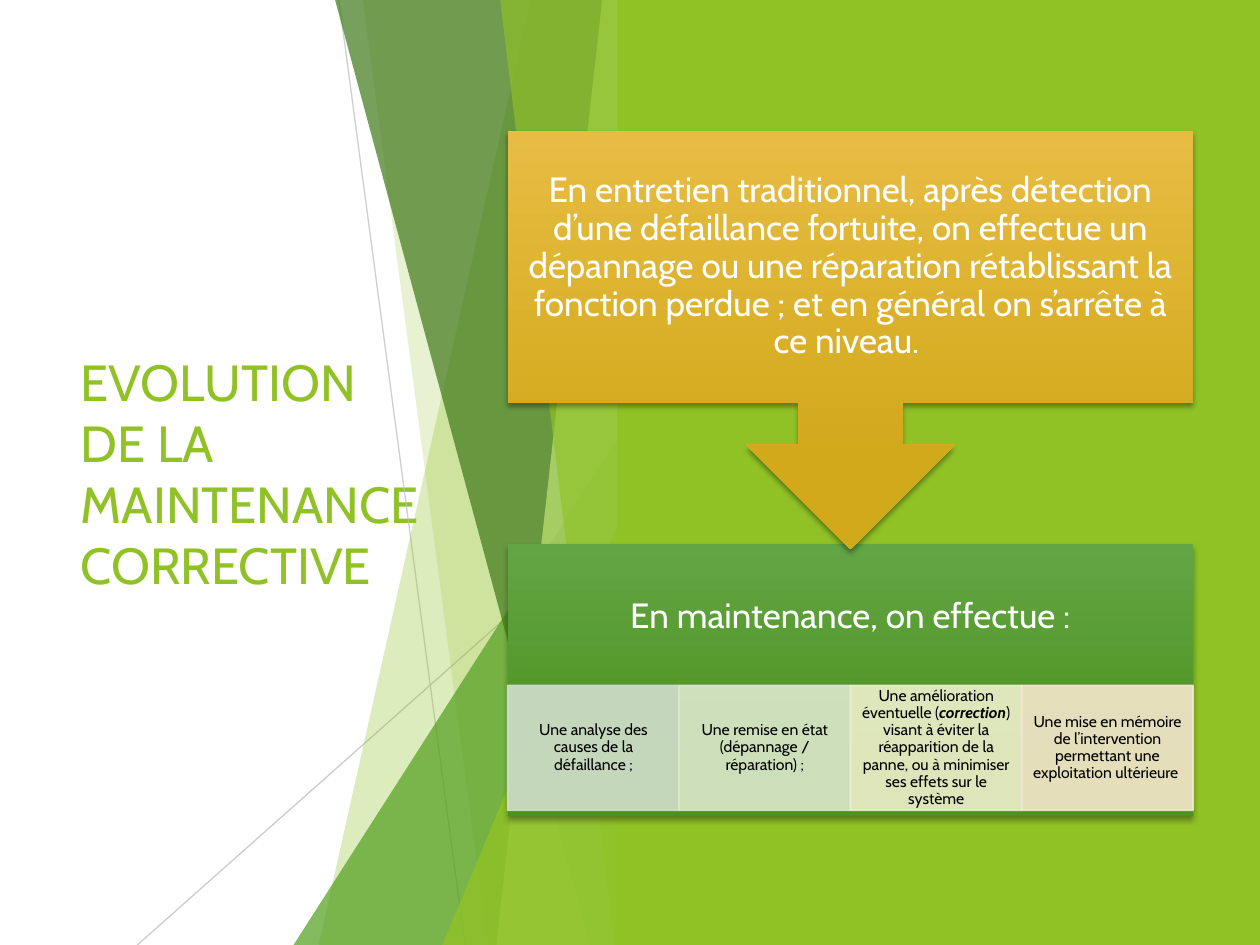
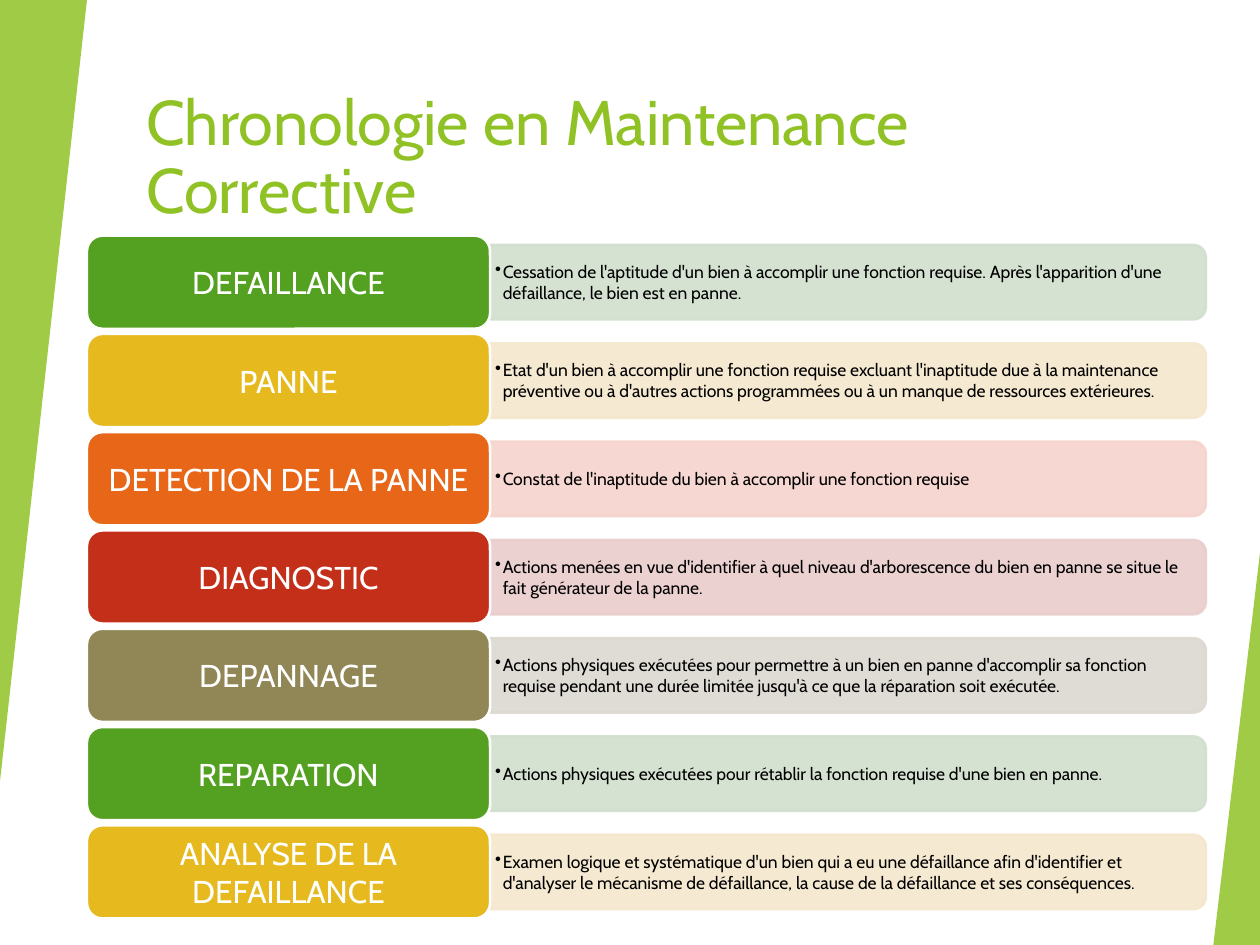
from lxml import etree
from pptx import Presentation
from pptx.dml.color import RGBColor
from pptx.enum.shapes import MSO_CONNECTOR, MSO_SHAPE
from pptx.enum.text import MSO_ANCHOR, MSO_AUTO_SIZE, PP_ALIGN
from pptx.oxml.ns import qn
from pptx.util import Inches, Pt

RECT = MSO_SHAPE.RECTANGLE
CALLOUT = MSO_SHAPE.DOWN_ARROW_CALLOUT
TRIANGLE = MSO_SHAPE.ISOSCELES_TRIANGLE
PILL = MSO_SHAPE.ROUNDED_RECTANGLE
BAR = MSO_SHAPE.ROUND_2_SAME_RECTANGLE
STRAIGHT = MSO_CONNECTOR.STRAIGHT
TOP, MIDDLE = MSO_ANCHOR.TOP, MSO_ANCHOR.MIDDLE
LEFT, CENTER = PP_ALIGN.LEFT, PP_ALIGN.CENTER

FONT = "Cabin"
W, H = 10, 7.5
C = {
    "lime": "90C226", "green": "54A021", "forest": "3F7819", "pale_lime": "C0E474",
    "white": "FFFFFF", "black": "000000", "grey": "BFBFBF",
    "gold": "E6B91E", "orange": "E76618", "red": "C42F1A", "olive": "918655",
    "pale_green": "D1DFCD", "pale_leaf": "DCE8CC", "pale_yellow": "EEEFCC",
    "pale_gold": "F5E7CD", "pale_orange": "F6D3CC", "pale_red": "EACDCD",
    "pale_olive": "DCD9D1",
    "green_light": "63A545", "green_dark": "4D921E",
    "gold_light": "E7BC43", "gold_dark": "D2A91B",
}


def write(tf, text, size, color="black", align=CENTER, anchor=MIDDLE,
          insets=(0.1, 0.05, 0.1, 0.05), spacing=None, bullet=False):
    tf.word_wrap = True
    tf.auto_size = MSO_AUTO_SIZE.NONE
    tf.vertical_anchor = anchor
    tf.margin_left, tf.margin_top, tf.margin_right, tf.margin_bottom = map(Inches, insets)
    p = tf.paragraphs[0]
    p.alignment = align
    if spacing:
        p.line_spacing = spacing
    if bullet:
        pPr = p._p.get_or_add_pPr()
        pPr.set("marL", str(Inches(0.06)))
        pPr.set("indent", str(Inches(-0.06)))
        etree.SubElement(pPr, qn("a:buChar")).set("char", "•")
    for i, part in enumerate(text.split("*")):
        r = p.add_run()
        r.text = part
        r.font.name, r.font.size = FONT, Pt(size)
        r.font.color.rgb = RGBColor.from_string(C[color])
        if i % 2:
            r.font.bold = r.font.italic = True


def paint(sp, fill=None, alpha=100, line=None, width=1):
    if fill:
        sp.fill.solid()
        sp.fill.fore_color.rgb = RGBColor.from_string(C[fill])
    if line:
        sp.line.color.rgb = RGBColor.from_string(C[line])
        sp.line.width = Pt(width)
    else:
        sp.line.fill.background()
    spPr = sp._element.spPr
    if alpha < 100:
        for clr in spPr.iter(qn("a:srgbClr")):
            etree.SubElement(clr, qn("a:alpha")).set("val", str(alpha * 1000))
    return etree.SubElement(spPr, qn("a:effectLst"))


prs = Presentation()
prs.slide_width, prs.slide_height = Inches(W), Inches(H)

titles = [
    ("EVOLUTION DE LA MAINTENANCE CORRECTIVE", (0.54, 1.51, 2.91, 4.48),
     dict(size=29, anchor=MIDDLE)),
    ("Chronologie en Maintenance Corrective", (1.06, 0.67, 8.36, 1.2),
     dict(size=36, anchor=TOP, spacing=0.9)),
]
slides = []
for text, box, style in titles:
    s = prs.slides.add_slide(prs.slide_layouts[5])
    title = s.shapes.title
    title.left, title.top, title.width, title.height = map(Inches, box)
    write(title.text_frame, text, color="lime", align=LEFT, **style)
    slides.append(s)
evolution, chronology = [s.shapes for s in slides]

MID = W / 2
for x1, y1, x2, y2, alpha in [(2.69, 0, 3.69, H, 75), (MID, 4.03, 1.09, H, 80)]:
    cx = evolution.add_connector(STRAIGHT, *map(Inches, (x1, y1, x2, y2)))
    paint(cx, alpha=alpha, line="grey", width=0.75)

facets = [
    ("band", 4.21, 2.53, "lime", 30),
    ("band", 2.88, 3.87, "lime", 20),
    ("corner", 2.33, 3.33, "green", 72),
    ("band", 2.66, 4.68, "forest", 70),
    ("band", 4.78, 3.94, "pale_lime", 70),
    ("band", 3.97, 4.88, "lime", 65),
    ("corner", 3.51, 3.93, "lime", 80),
]
for kind, a, b, color, alpha in facets:
    if kind == "band":
        fb = evolution.build_freeform(Inches(a), 0)
        corners = [(MID, 0), (MID, H), (b, H)]
        fb.add_line_segments([(Inches(x), Inches(y)) for x, y in corners])
        sp = fb.convert_to_shape()
    else:
        sp = evolution.add_shape(TRIANGLE, *map(Inches, (a, b, MID - a, H - b)))
        sp.adjustments[0] = 1
    paint(sp, color, alpha)

panel = evolution.add_shape(RECT, *map(Inches, (0.49 * W, 0, 0.51 * W, H)))
paint(panel, "lime")

X, SPAN = 4.03, 5.44
steps = [
    (RECT, 4.32, 2.16, "green", 1.16, "En maintenance, on effectue :"),
    (CALLOUT, 1.04, 3.32, "gold", 0.16,
     "En entretien traditionnel, après détection d’une défaillance fortuite, on effectue "
     "un dépannage ou une réparation rétablissant la fonction perdue ; et en général on "
     "s’arrête à ce niveau. "),
]
for kind, y, h, color, bottom, text in steps:
    sp = evolution.add_shape(kind, *map(Inches, (X, y, SPAN, h)))
    sp.fill.gradient()
    sp.fill.gradient_angle = 270
    for stop, pos, tone in zip(sp.fill.gradient_stops, (0, 0.78), ("light", "dark")):
        stop.position = pos
        stop.color.rgb = RGBColor.from_string(C[f"{color}_{tone}"])
    effects = paint(sp)
    shadow = etree.SubElement(effects, qn("a:outerShdw"), blurRad=str(Pt(3)),
                              dist=str(Pt(2)), dir="5400000", rotWithShape="0")
    clr = etree.SubElement(shadow, qn("a:srgbClr"), val=C["black"])
    etree.SubElement(clr, qn("a:alpha"), val="35000")
    write(sp.text_frame, text, 20, "white", insets=(0.16, 0.16, 0.16, bottom), spacing=0.9)

actions = [
    ("pale_green", "Une analyse des causes de la défaillance ;"),
    ("pale_leaf", "Une remise en état (dépannage / réparation) ;"),
    ("pale_yellow", "Une amélioration éventuelle (*correction*) visant à éviter la réapparition "
                    "de la panne, ou à minimiser ses effets sur le système"),
    ("pale_gold", "Une mise en mémoire de l’intervention permettant une exploitation ultérieure "),
]
COL = SPAN / len(actions)
for i, (color, text) in enumerate(actions):
    sp = evolution.add_shape(RECT, *map(Inches, (X + i * COL, 5.44, COL, 0.99)))
    paint(sp, color, 90, color)
    write(sp.text_frame, text, 9, insets=(0.07, 0.01, 0.07, 0.01), spacing=0.9)

for x, y, w, h, turn in [(0, 0, 0.69, 6.2, 180), (9.63, 4.39, 0.37, 3.11, 0)]:
    sp = chronology.add_shape(TRIANGLE, *map(Inches, (x, y, w, h)))
    sp.adjustments[0] = 1
    sp.rotation = turn
    paint(sp, "lime", 85)

stages = [
    ("DEFAILLANCE", "green",
     "Cessation de l'aptitude d'un bien à accomplir une fonction requise. Après "
     "l'apparition d'une défaillance, le bien est en panne."),
    ("PANNE", "gold",
     "Etat d'un bien à accomplir une fonction requise excluant l'inaptitude due à la "
     "maintenance préventive ou à d'autres actions programmées ou à un manque de "
     "ressources extérieures."),
    ("DETECTION DE LA PANNE", "orange",
     "Constat de l'inaptitude du bien à accomplir une fonction requise"),
    ("DIAGNOSTIC", "red",
     "Actions menées en vue d'identifier à quel niveau d'arborescence du bien en panne "
     "se situe le fait générateur de la panne."),
    ("DEPANNAGE", "olive",
     "Actions physiques exécutées pour permettre à un bien en panne d'accomplir sa "
     "fonction requise pendant une durée limitée jusqu'à ce que la réparation soit "
     "exécutée."),
    ("REPARATION", "green",
     "Actions physiques exécutées pour rétablir la fonction requise d'une bien en panne."),
    ("ANALYSE DE LA DEFAILLANCE", "gold",
     "Examen logique et systématique d'un bien qui a eu une défaillance afin d'identifier "
     "et d'analyser le mécanisme de défaillance, la cause de la défaillance et ses "
     "conséquences."),
]
ROW, PILL_X, PILL_W, PILL_H = 0.78, 0.69, 3.2, 0.74
BAR_X, BAR_W, BAR_H = PILL_X + PILL_W, 5.68, 0.59
for i, (name, color, text) in enumerate(stages):
    y = 1.87 + i * ROW
    mid = y + PILL_H / 2
    sp = chronology.add_shape(BAR, *map(Inches, (
        BAR_X + (BAR_W - BAR_H) / 2, mid - BAR_W / 2, BAR_H, BAR_W)))
    sp.rotation = 90
    paint(sp, f"pale_{color}", 90, f"pale_{color}", 1.5)
    tb = chronology.add_textbox(*map(Inches, (BAR_X, mid - 0.27, 5.65, 0.54)))
    write(tb.text_frame, text, 10, align=LEFT, insets=(0.04, 0.02, 0.04, 0.02), bullet=True)
    sp = chronology.add_shape(PILL, *map(Inches, (PILL_X, y, PILL_W, PILL_H)))
    paint(sp, color, line="white", width=1.5)
    write(sp.text_frame, name, 18, "white", insets=(0.07, 0.04, 0.07, 0.04))

prs.save("out.pptx")
